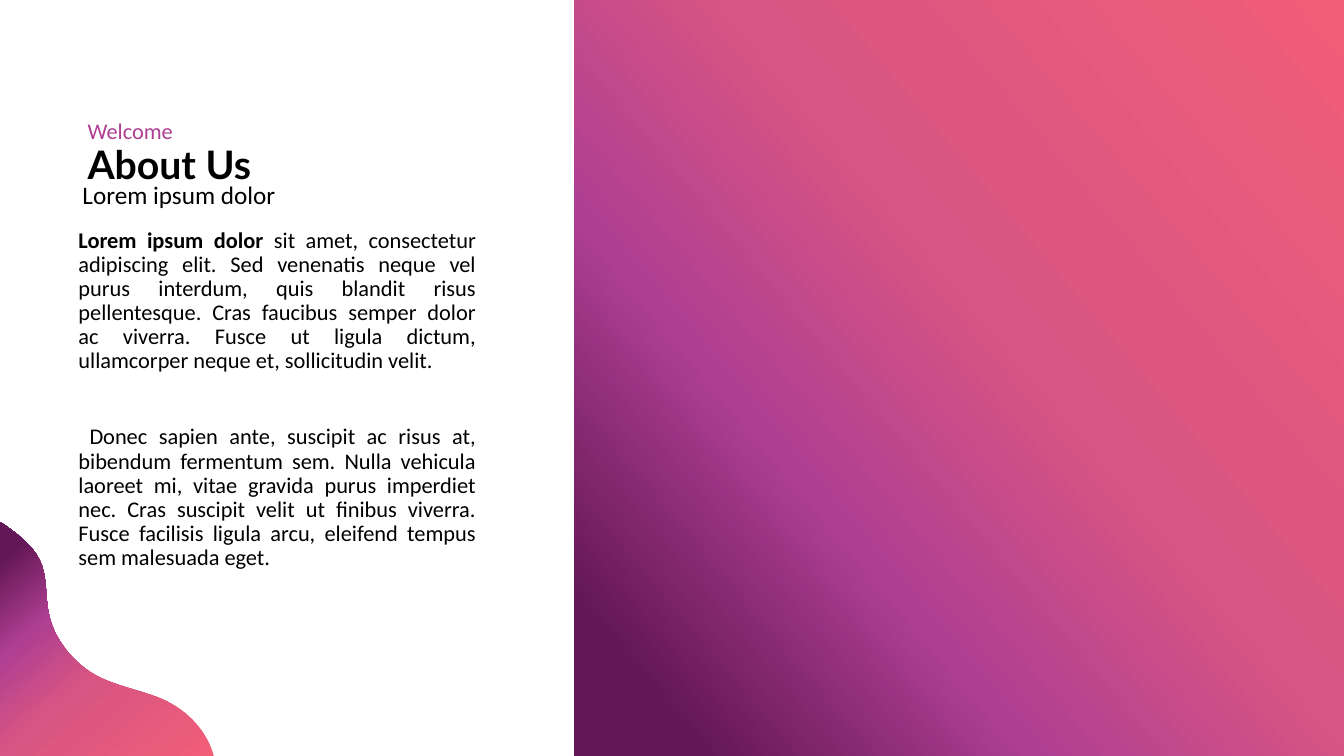
from lxml import etree
from pptx import Presentation
from pptx import util as u
from pptx.dml.color import RGBColor
from pptx.enum import shapes, text
from pptx.oxml.ns import qn

BLACK = RGBColor(0x00, 0x00, 0x00)
CORAL = RGBColor(0xF1, 0x5E, 0x78)
ROSE = RGBColor(0xD8, 0x55, 0x83)
PURPLE = RGBColor(0xAF, 0x3F, 0x92)
PLUM = RGBColor(0x63, 0x17, 0x56)
STOPS = [(0, CORAL), (44, ROSE), (67, PURPLE), (91, PLUM)]
ANGLE = 140

HEADS = [
    ("About Us", (0.77, 1.34, 3.96, 0.57), dict(size=28, face="Lato", bold=True)),
    ("Welcome", (0.77, 1.11, 1.06, 0.37), dict(color=PURPLE, wrap=False)),
    ("Lorem ipsum dolor", (0.72, 1.73, 2.23, 0.4), dict(size=18, wrap=False)),
]
BODY = [
    [("Lorem ipsum dolor ", True),
     ("sit amet, consectetur adipiscing elit. Sed venenatis neque vel purus "
      "interdum, quis blandit risus pellentesque. Cras faucibus semper dolor "
      "ac viverra. Fusce ut ligula dictum, ullamcorper neque et, "
      "sollicitudin velit.", False)],
    [("Donec sapien ante, suscipit ac risus at, bibendum fermentum sem. "
      "Nulla vehicula laoreet mi, vitae gravida purus imperdiet nec. Cras "
      "suscipit velit ut finibus viverra. Fusce facilisis ligula arcu, "
      "eleifend tempus sem malesuada eget.", False)],
]
BODY_BOX = (0.68, 2.22, 4.14, 3.25)
PANEL = (5.7, 0, 7.63, 7.5)

WAVE_START = (2.12, 7.5)
WAVE = [
    ((2.12, 7.5), (2.04, 7.11), (1.57, 6.92)),
    ((1.19, 6.78), (0.92, 6.78), (0.65, 6.44)),
    ((0.31, 6), (0.61, 5.7), (0.25, 5.37)),
    ((0.12, 5.25), (0, 5.18), (0, 5.18)),
]
CORNER = (0, 7.5)
CENTER = (1.06, 6.34)
STEPS = 16


def inches(box):
    return [u.Inches(v) for v in box]


def blend(shape):
    shape.shadow.inherit = False
    shape.line.fill.background()
    shape.fill.gradient()
    shape.fill.gradient_angle = 360 - ANGLE
    stops = next(shape._element.iter(qn("a:gsLst")))
    for old in list(stops):
        stops.remove(old)
    for pos, color in STOPS:
        stop = etree.SubElement(stops, qn("a:gs"), pos=str(pos * 1000))
        etree.SubElement(stop, qn("a:srgbClr"), val=str(color))


def write(slide, paras, box, size=16, face="Calibri", color=BLACK, bold=False,
          wrap=True, align=None, line=None, gap=0, indent=0):
    frame = slide.shapes.add_textbox(*inches(box)).text_frame
    frame.word_wrap = wrap
    if isinstance(paras, str):
        paras = [[(paras, bold)]]
    for i, runs in enumerate(paras):
        para = frame.add_paragraph() if i else frame.paragraphs[0]
        para.alignment = align
        para.line_spacing = line
        if i:
            para.space_before = u.Pt(gap)
            para._p.get_or_add_pPr().set("indent", str(u.Inches(indent)))
        for words, heavy in runs:
            run = para.add_run()
            run.text = words
            run.font.size = u.Pt(size)
            run.font.name = face
            run.font.bold = heavy
            run.font.color.rgb = color


def curve(start, one, two, end):
    for i in range(1, STEPS + 1):
        t = i / STEPS
        s = 1 - t
        yield tuple(s**3 * a + 3 * s * s * t * b + 3 * s * t * t * c + t**3 * d
                    for a, b, c, d in zip(start, one, two, end))


def unturn(point):
    dx, dy = point[0] - CENTER[0], point[1] - CENTER[1]
    return u.Inches(CENTER[0] + dy), u.Inches(CENTER[1] - dx)


def draw_wave(slide):
    points = [WAVE_START]
    for part in WAVE:
        points.extend(curve(points[-1], *part))
    points.append(CORNER)
    first, *rest = [unturn(p) for p in points]
    pen = slide.shapes.build_freeform(*first, scale=1.0)
    pen.add_line_segments(rest, close=True)
    wave = pen.convert_to_shape()
    wave.rotation = 90
    blend(wave)


def main():
    deck = Presentation()
    deck.slide_width, deck.slide_height = u.Inches(13.33), u.Inches(7.5)
    slide = deck.slides.add_slide(deck.slide_layouts[6])
    blend(slide.shapes.add_shape(shapes.MSO_SHAPE.RECTANGLE, *inches(PANEL)))
    write(slide, BODY, BODY_BOX, align=text.PP_ALIGN.JUSTIFY, line=0.9,
          gap=37, indent=0.11)
    for words, box, style in HEADS:
        write(slide, words, box, **style)
    draw_wave(slide)
    deck.save("out.pptx")


if __name__ == "__main__":
    main()
